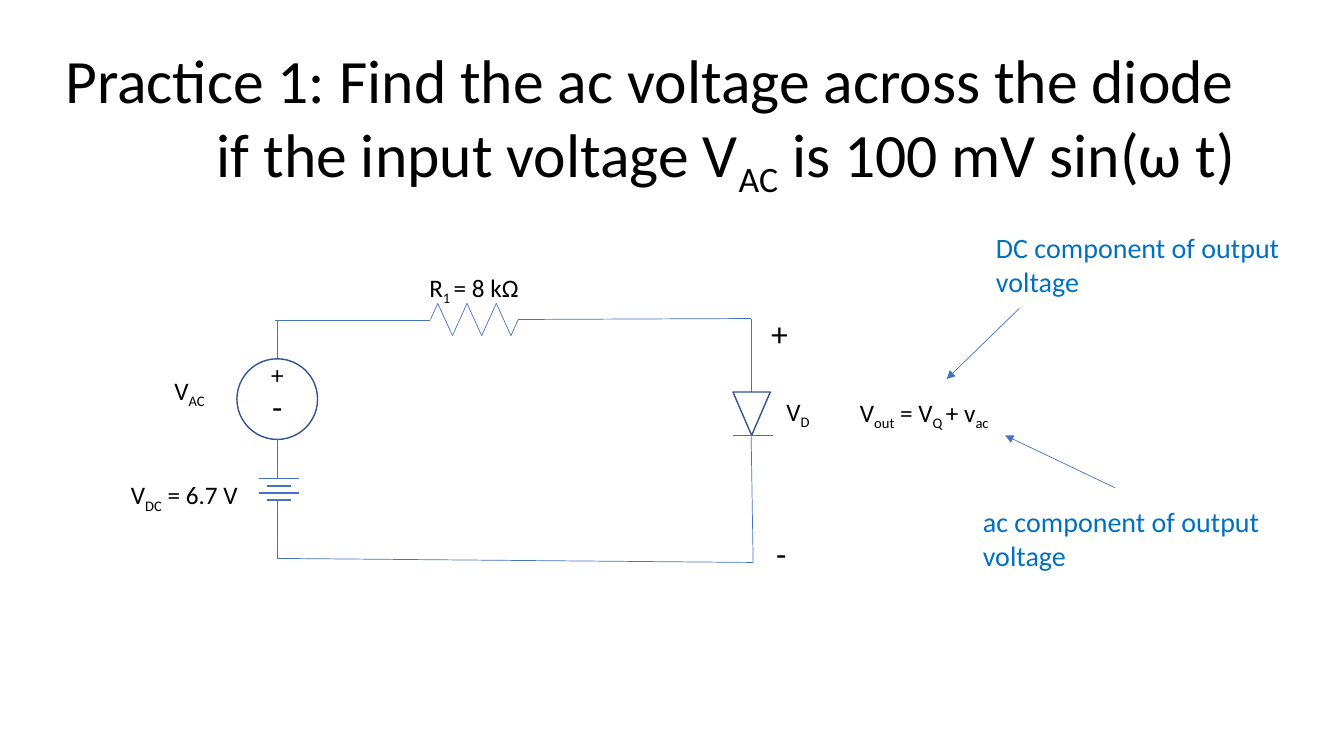
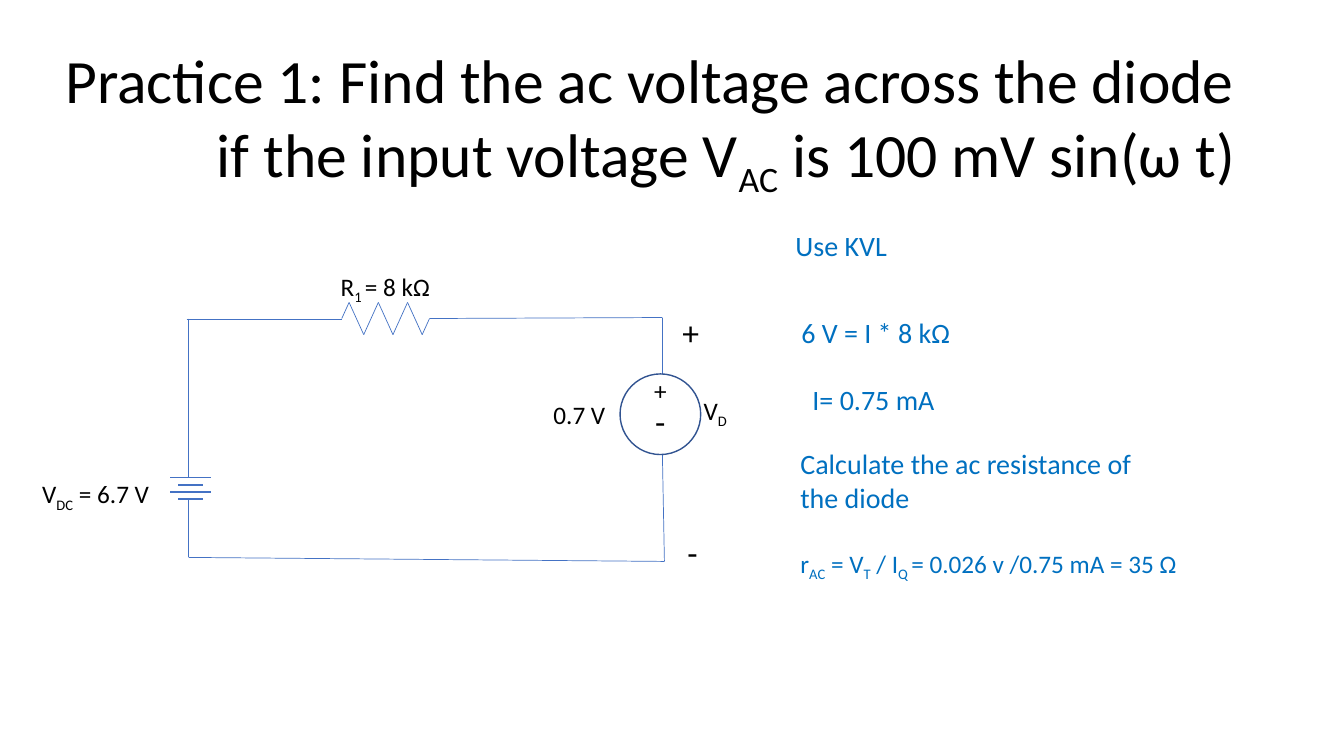
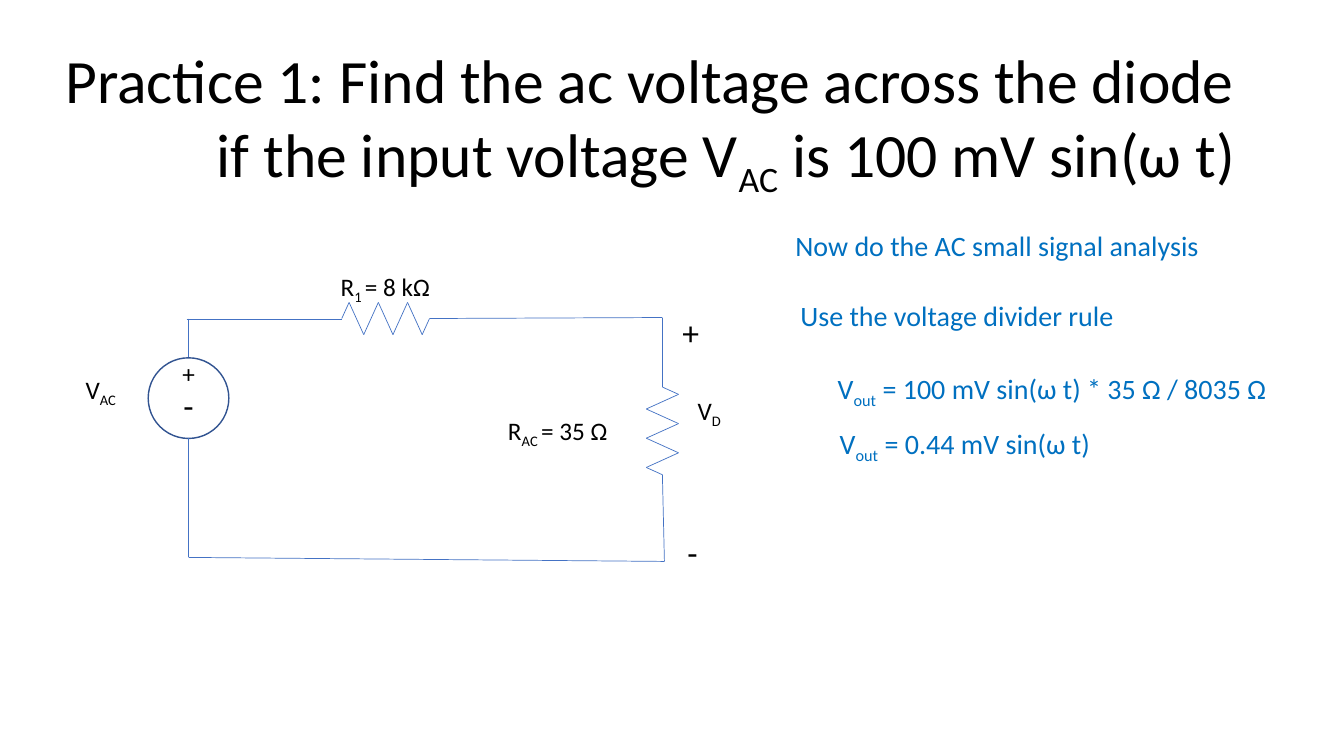
from itertools import pairwise

from lxml import etree
from pptx import Presentation
from pptx import util as u
from pptx.dml.color import RGBColor
from pptx.enum import shapes, text
from pptx.oxml.ns import qn

CELL = u.Inches(0.1)  # the slide is a grid of 133.3 by 75 cells
COLS, ROWS = 133.3, 75
FONT = "Calibri"
BLACK, NOTE, WIRE, EDGE = "000000", "0070C0", "4472C4", "325491"
TITLE = ("Practice 1: Find the ac voltage across the diode "
         "if the input voltage V|AC| is 100 mV sin(ω t)")
SIDE = 8    # diameter of a voltage source
ZIG = 8.7   # length of a resistor
TOP, LOW = 15.2, 23.7  # resistor start and bottom rail, from the loop's corner


def cells(*nums):
    return [u.Emu(round(n * CELL)) for n in nums]


def tint(code):
    return RGBColor.from_string(code)


def label(sl, at, words, size=18, color=BLACK, grow=True):
    """Text box; the parts between bars are subscripts."""
    frame = sl.shapes.add_textbox(*cells(*at)).text_frame
    frame.word_wrap = True
    frame.auto_size = (text.MSO_AUTO_SIZE.SHAPE_TO_FIT_TEXT if grow
                       else text.MSO_AUTO_SIZE.NONE)
    para = frame.paragraphs[0]
    for i, part in enumerate(words.split("|")):
        if not part:
            continue
        run = para.add_run()
        run.text = part
        for key, val in {"name": FONT, "size": u.Pt(size)}.items():
            setattr(run.font, key, val)
        run.font.color.rgb = tint(color)
        if i % 2:
            run._r.get_or_add_rPr().set("baseline", "-25000")
    return frame


def title(sl):
    frame = label(sl, (5.5, 4.3, 118.7, 15.5), TITLE, 44, grow=False)
    frame.vertical_anchor = text.MSO_ANCHOR.MIDDLE
    para = frame.paragraphs[0]
    para.line_spacing = 0.9
    props = para._p.get_or_add_pPr()
    hang = u.Inches(1.5)
    for key, val in {"marL": hang, "indent": -hang}.items():
        props.set(key, str(val))


def stroke(line, color, width):
    line.color.rgb = tint(color)
    line.width = u.Pt(width)


def wire(sl, *points, width=0.5, arrow=False):
    """Straight lines from point to point."""
    for start, end in pairwise(points):
        link = sl.shapes.add_connector(shapes.MSO_CONNECTOR.STRAIGHT,
                                       *cells(*start, *end))
        stroke(link.line, WIRE, width)
        props = link._element.spPr
        if arrow:
            etree.SubElement(props.find(qn("a:ln")), qn("a:tailEnd"),
                             type="triangle")
        etree.SubElement(props, qn("a:effectLst"))


def outline(sl, kind, at):
    shape = sl.shapes.add_shape(kind, *cells(*at))
    shape.shadow.inherit = False
    shape.fill.background()
    stroke(shape.line, EDGE, 1)
    return shape


def zigzag(sl, x, y, down=False):
    """Resistor that starts at x, y and runs right or down."""
    step = ZIG / 6
    way = [(0, 0)]
    way += [((k + 0.5) * step, 1.6 * (-1) ** (k + 1)) for k in range(6)]
    way.append((ZIG, 0))
    wire(sl, *[(x - b, y + a) if down else (x + a, y + b) for a, b in way])


def source(sl, x, y):
    outline(sl, shapes.MSO_SHAPE.OVAL, (x, y, SIDE, SIDE))
    label(sl, (x + 2.4, y - 0.4, 3.6, 4), "+")
    label(sl, (x + 2.5, y + 2.2, 3.6, 5), "-", 24)


def battery(sl, x, y):
    """Four plates and the lead to the bottom rail, x, y being the loop's corner."""
    for k in range(4):
        half = 1.2 if k % 2 else 2
        row = y + 15.8 + 0.7 * k
        wire(sl, (x + 0.2 - half, row), (x + 0.2 + half, row), width=1)
    wire(sl, (x, y + 17.9), (x, y + LOW))
    label(sl, (x - 15.5, y + 15.4, 13.6, 4), "V|DC| = 6.7 V")


def supply(sl, x, y, end):
    """AC source on the left side, wired down to row end."""
    top = y + 3.9
    wire(sl, (x, y), (x, top))
    source(sl, x - SIDE / 2, top)
    wire(sl, (x, top + SIDE), (x, end))
    label(sl, (x - 11.2, y + 5, 7.2, 4), "V|AC")


def diode(sl, x, y):
    """Triangle and bar, centred on x."""
    mark = outline(sl, shapes.MSO_SHAPE.ISOSCELES_TRIANGLE,
                   (x - 1.8, y, 3.7, 4.3))
    mark._element.spPr.find(qn("a:xfrm")).set("flipV", "1")
    wire(sl, (x - 1.8, y + 4.3), (x + 2.2, y + 4.3))


def loop(sl, x, y, gap, out=49.5):
    """Rails, R1 and the right side, open over the rows in gap for a part."""
    right = x + 47
    wire(sl, (x - 0.2, y + 0.1), (x + TOP, y + 0.1))
    zigzag(sl, x + TOP, y)
    wire(sl, (x + TOP + ZIG, y), (right, y - 0.1), (right, gap[0]))
    wire(sl, (right, gap[1]), (right + 0.2, y + LOW + 0.4), (x, y + LOW))
    label(sl, (x + 14.1, y - 5.2, 17.3, 4), "R|1 |= 8 kΩ")
    label(sl, (x + out, y + 7.1, 5.2, 4), "V|D")
    label(sl, (x + 48, y - 1.1, 3.6, 5), "+", 24)
    label(sl, (x + 48.5, y + 20.7, 3.6, 5), "-", 24)
    return right


def notes(sl, *items):
    for x, y, wide, words, size in items:
        label(sl, (x, y, wide, size / 5 + 0.4), words, size, NOTE)


def whole(sl):
    x, y = 27.5, 31.7
    right = loop(sl, x, y, (38.9, 43.3))
    diode(sl, right, 38.9)
    supply(sl, x, y, y + 15.7)
    battery(sl, x, y)
    label(sl, (84.3, 38.9, 16.8, 4), "V|out| = V|Q |+ v|ac")
    notes(sl, (97.8, 22.4, 31.4, "DC component of output voltage", 20),
          (96.5, 49.6, 31.4, "ac component of output voltage", 20))
    wire(sl, (101.1, 30.6), (93.9, 37.6), arrow=True)
    wire(sl, (110.6, 48.4), (99.7, 43.2), arrow=True)


def bias(sl):
    x, y, top = 18.7, 31.6, 37.1
    right = loop(sl, x, y, (top, top + SIDE), 50.1)
    source(sl, right - SIDE / 2 - 0.2, top)
    wire(sl, (x, y), (x, y + 15.7))
    battery(sl, x, y)
    label(sl, (53.9, 39.1, 7.2, 4), "0.7 V")
    notes(sl, (77.9, 22.2, 39, "Use KVL", 20),
          (78.5, 30.8, 39, "6 V = I * 8 kΩ", 20),
          (79.6, 37.5, 30, "I= 0.75 mA", 20),
          (78.4, 43.8, 39, "Calculate the ac resistance of the diode", 20),
          (78.4, 53.9, 41.1,
           "r|AC| = V|T| / I|Q |= 0.026 v /0.75 mA = 35 Ω", 18))


def signal(sl):
    x, y, top = 18.7, 31.6, 38.4
    right = loop(sl, x, y, (top, top + ZIG))
    zigzag(sl, right, top, down=True)
    supply(sl, x, y, y + LOW)
    label(sl, (49.4, 40.7, 13.7, 4), "R|AC |= 35 Ω")
    notes(sl, (77.9, 22.2, 44.2, "Now do the AC small signal analysis", 20),
          (78.4, 29.1, 39, "Use the voltage divider rule", 20),
          (82.1, 36.4, 47.2, "V|out| = 100 mV sin(ω t) * 35 Ω / 8035 Ω", 20),
          (82.3, 41.8, 47.2, "V|out| = 0.44 mV sin(ω t)", 20))


def main():
    deck = Presentation()
    deck.slide_width, deck.slide_height = cells(COLS, ROWS)
    for draw in (whole, bias, signal):
        sl = deck.slides.add_slide(deck.slide_layouts[6])
        title(sl)
        draw(sl)
    deck.save("out.pptx")


if __name__ == "__main__":
    main()
